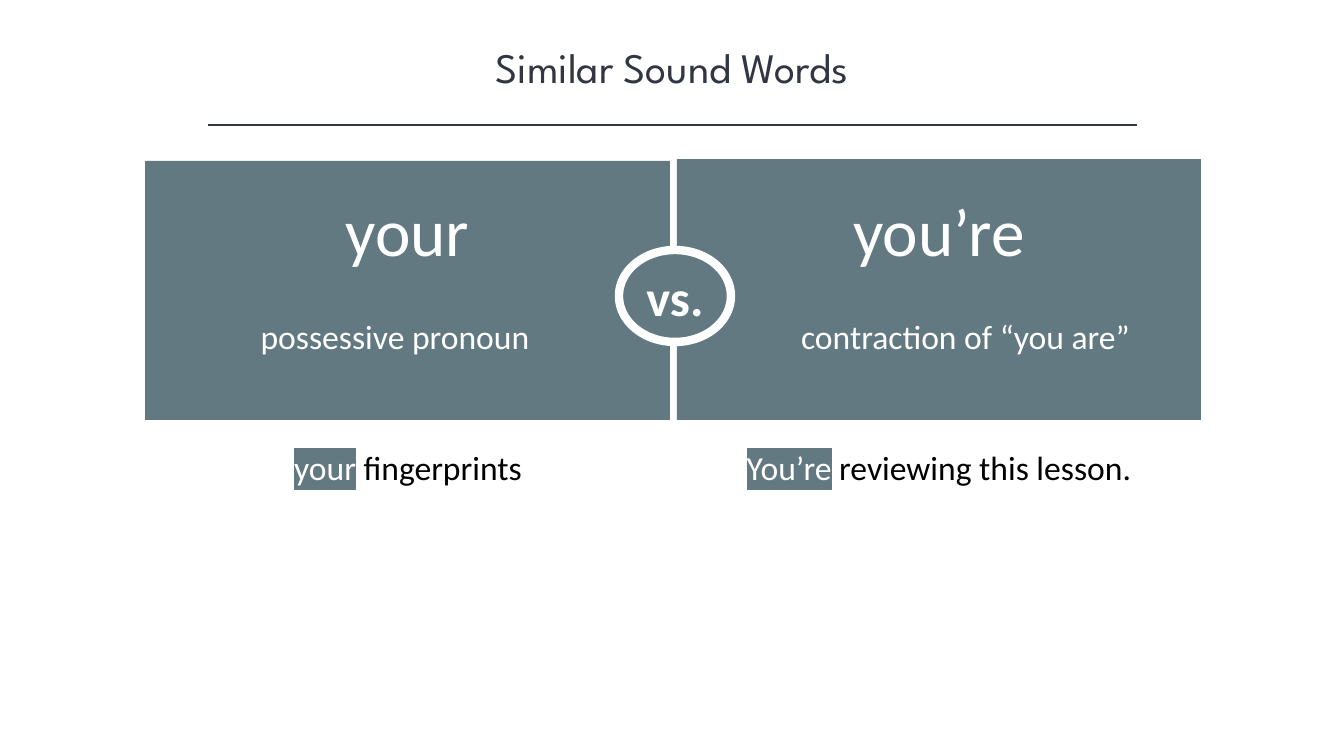
from lxml import etree
from pptx import Presentation
from pptx.dml.color import RGBColor
from pptx.enum import shapes, text
from pptx.oxml.ns import qn
from pptx.util import Pt

PX = 914400 / 100.8
SLATE = RGBColor(0x62, 0x79, 0x81)
INK = RGBColor(0x32, 0x35, 0x42)
WHITE = RGBColor(0xFF, 0xFF, 0xFF)
BLACK = RGBColor(0, 0, 0)

# Boxes are left, top, width, height in px
TITLE = ("Similar Sound Words", (168, 37, 1008, 61))
RULE = (208, 125, 1137, 125)
VERSUS = ("vs.", (619, 250, 112, 92))
SIDES = [
    {
        "panel": (145, 161, 525, 259),
        "word": ("your", (335, 184, 145, 92)),
        "meaning": ("possessive pronoun", (184, 311, 422, 50)),
        "example": ("your", " fingerprints", (145, 442, 526, 50)),
    },
    {
        "panel": (677, 159, 524, 261),
        "word": ("you’re", (842, 184, 194, 92)),
        "meaning": ("contraction of “you are”", (749, 311, 433, 50)),
        "example": ("You’re", " reviewing this lesson.", (677, 442, 524, 50)),
    },
]


def px(lengths):
    return [round(n * PX) for n in lengths]


def style(paragraph, size, color, face="Calibri", bold=False):
    paragraph.alignment = text.PP_ALIGN.CENTER
    font = paragraph.font
    font.size, font.name, font.bold = Pt(size), face, bold
    font.color.rgb = color


def add_label(slide, words, box, size, color, face="Calibri", wrap=True):
    """Add a centred text box and return its paragraph."""
    frame = slide.shapes.add_textbox(*px(box)).text_frame
    frame.word_wrap = wrap
    paragraph = frame.paragraphs[0]
    paragraph.text = words
    style(paragraph, size, color, face)
    return paragraph


def add_block(slide, preset, box):
    block = slide.shapes.add_shape(preset, *px(box))
    block.shadow.inherit = False
    block.fill.solid()
    block.fill.fore_color.rgb = SLATE
    block.line.fill.background()
    return block


def highlight(run, color):
    mark = etree.SubElement(run.font.fill._xPr, qn("a:highlight"))
    etree.SubElement(mark, qn("a:srgbClr"), val=str(color))


def add_rule(slide):
    rule = slide.shapes.add_connector(shapes.MSO_CONNECTOR.STRAIGHT, *px(RULE))
    rule.line.color.rgb = INK
    rule.line.width = Pt(1)
    etree.SubElement(rule._element.spPr, qn("a:effectLst"))


def add_versus(slide):
    words, box = VERSUS
    badge = add_block(slide, shapes.MSO_SHAPE.OVAL, box)
    badge.line.color.rgb = WHITE
    badge.line.width = Pt(6)
    frame = badge.text_frame
    frame.word_wrap = False
    frame.vertical_anchor = text.MSO_ANCHOR.MIDDLE
    frame.text = words
    style(frame.paragraphs[0], 36, WHITE, bold=True)


def add_example(slide, marked, rest, box):
    paragraph = add_label(slide, marked, box, 24, BLACK)
    keyword = paragraph.runs[0]
    keyword.font.color.rgb = WHITE
    highlight(keyword, SLATE)
    paragraph.add_run().text = rest


def main():
    deck = Presentation()
    deck.slide_width, deck.slide_height = px((1344, 756))
    slide = deck.slides.add_slide(deck.slide_layouts[6])

    add_label(slide, *TITLE, 30, INK, "League Spartan")
    add_rule(slide)
    for side in SIDES:
        add_block(slide, shapes.MSO_SHAPE.RECTANGLE, side["panel"])
    add_versus(slide)
    for side in SIDES:
        add_label(slide, *side["meaning"], 24, WHITE)
        add_label(slide, *side["word"], 48, WHITE, wrap=False)
        add_example(slide, *side["example"])
    deck.save("out.pptx")


if __name__ == "__main__":
    main()
